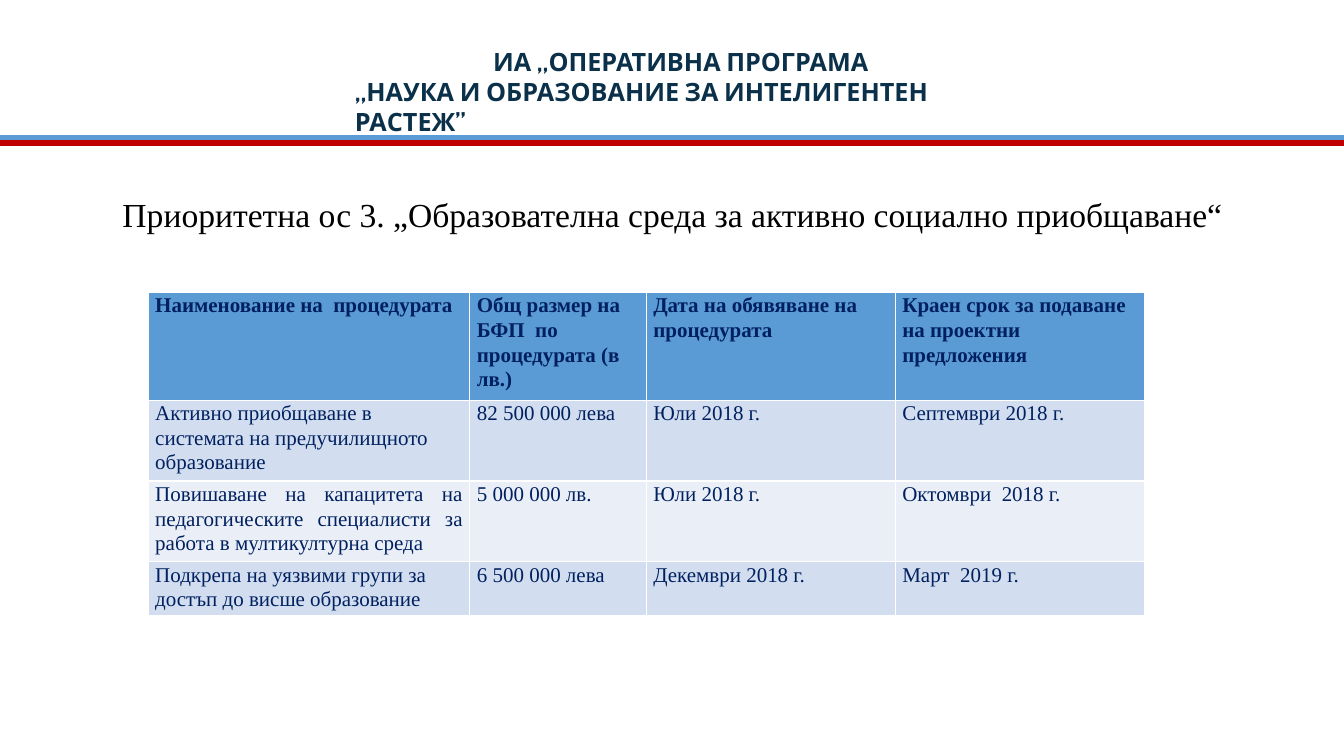
from lxml import etree
from pptx import Presentation
from pptx.dml.color import RGBColor
from pptx.enum import text
from pptx.oxml.ns import qn
from pptx.util import Inches, Pt

# Content
PROGRAMME = ["ИА „ОПЕРАТИВНА ПРОГРАМА", "„НАУКА И ОБРАЗОВАНИЕ ЗА ИНТЕЛИГЕНТЕН РАСТЕЖ”"]
TITLE = "Приоритетна ос 3. „Образователна среда за активно социално приобщаване“"
PROCEDURES = [
    ["Наименование на  процедурата", "Общ размер на БФП  по процедурата (в лв.)",
     "Дата на обявяване на процедурата", "Краен срок за подаване на проектни предложения"],
    ["Активно приобщаване в системата на предучилищното образование",
     "82 500 000 лева", "Юли 2018 г. ", "Септември 2018 г."],
    ["Повишаване на капацитета на педагогическите специалисти за работа в мултикултурна среда",
     "5 000 000 лв.", "Юли 2018 г.", "Октомври  2018 г."],
    ["Подкрепа на уязвими групи за достъп до висше образование",
     "6 500 000 лева", "Декември 2018 г.", "Март  2019 г."],
]
JUSTIFIED = {(1, 1), (1, 2), (2, 0), (2, 1), (2, 2), (2, 3)}
COLUMN_WIDTHS = [3.19, 1.75, 2.47, 2.47]
ROW_HEIGHTS = [0.97, 0.73, 0.73, 0.49]
ROW_FILLS = ["5B9BD5", "D2DEEF", "EAEFF7", "D2DEEF"]
RULES = [(1.37, "5B9BD5"), (1.42, "C00000")]
WIDTH, HEIGHT = 13.33, 7.5
ALIGN = text.PP_ALIGN


def color(value):
    return RGBColor.from_string(value)


def style(para, font, size, ink, bold=False):
    for span in para.runs:
        span.font.name = font
        span.font.size = Pt(size)
        span.font.bold = bold
        span.font.color.rgb = color(ink)


deck = Presentation()
deck.slide_width, deck.slide_height = Inches(WIDTH), Inches(HEIGHT)
page = deck.slides.add_slide(deck.slide_layouts[5])

# Double rule under the header
for y, ink in RULES:
    rule = page.shapes.add_connector(1, 0, Inches(y), deck.slide_width, Inches(y))
    rule.line.color.rgb = color(ink)
    rule.line.width = Pt(3.75)
    etree.SubElement(rule._element.spPr, qn("a:effectLst"))

# Programme name
box = page.shapes.add_textbox(Inches(3.42), Inches(0.41), Inches(WIDTH / 2), Inches(0.71))
box.text_frame.word_wrap = True
box.text_frame.text = "\n".join(PROGRAMME)
for para in box.text_frame.paragraphs:
    style(para, "Cabin", 18, "0A304A", bold=True)
box.text_frame.paragraphs[0].alignment = ALIGN.CENTER

# Title
title = page.shapes.title
title.left, title.top = Inches(0.92), Inches(1.62)
title.width, title.height = Inches(11.5), Inches(1.05)
title.text_frame.text = TITLE
title.text_frame.vertical_anchor = text.MSO_ANCHOR.MIDDLE
heading = title.text_frame.paragraphs[0]
heading.alignment = ALIGN.CENTER
heading.line_spacing = 0.9
style(heading, "Times New Roman", 24, "000000")

# Table of procedures
table = page.shapes.add_table(
    len(PROCEDURES), len(COLUMN_WIDTHS), Inches(1.47), Inches(2.9),
    Inches(sum(COLUMN_WIDTHS)), Inches(sum(ROW_HEIGHTS))).table
for column, width in zip(table.columns, COLUMN_WIDTHS):
    column.width = Inches(width)
for r, (values, height, fill) in enumerate(zip(PROCEDURES, ROW_HEIGHTS, ROW_FILLS)):
    table.rows[r].height = Inches(height)
    for c, value in enumerate(values):
        cell = table.cell(r, c)
        cell.fill.solid()
        cell.fill.fore_color.rgb = color(fill)
        cell.margin_left = cell.margin_right = Inches(0.07)
        cell.margin_top = cell.margin_bottom = 0
        cell.text_frame.text = value
        para = cell.text_frame.paragraphs[0]
        para.alignment = ALIGN.JUSTIFY if (r, c) in JUSTIFIED else ALIGN.LEFT
        para.line_spacing = 1.07
        style(para, "Times New Roman", 15, "002060", bold=r == 0)

deck.save("out.pptx")
